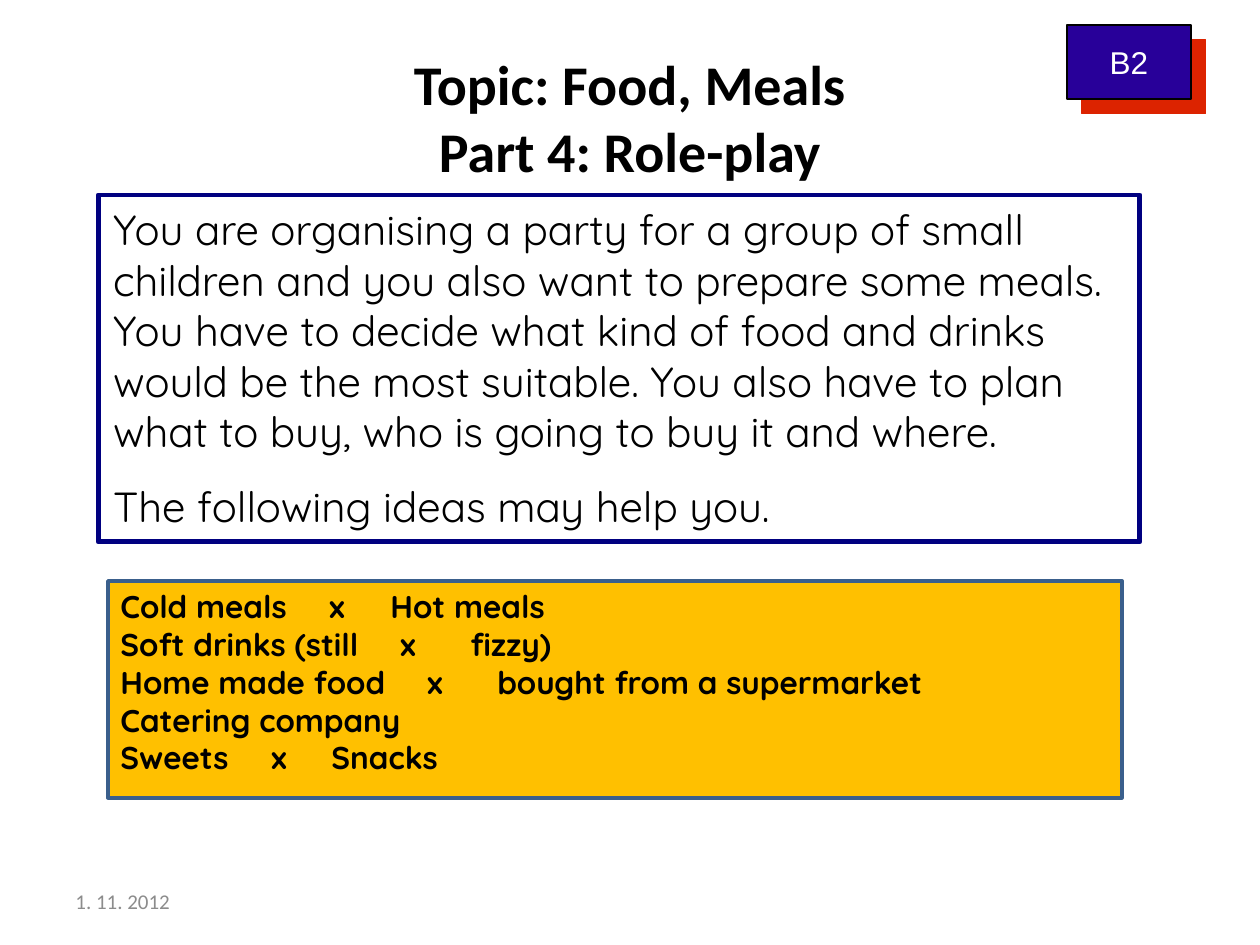
from lxml import etree
from pptx import Presentation
from pptx import util as u
from pptx.dml.color import RGBColor
from pptx.enum import shapes, text
from pptx.oxml.ns import qn

PX = 914400 / 126
BLACK = RGBColor(0x00, 0x00, 0x00)
WHITE = RGBColor(0xFF, 0xFF, 0xFF)
GREY = RGBColor(0x8C, 0x8C, 0x8C)
NAVY = RGBColor(0x00, 0x00, 0x80)
INDIGO = RGBColor(0x28, 0x00, 0x99)
AMBER = RGBColor(0xFF, 0xC0, 0x00)
STEEL = RGBColor(0x3A, 0x5F, 0x8C)


def px(value):
    return u.Emu(round(value * PX))


def format_text(paragraph, font_name, size, color, bold=False, align=text.PP_ALIGN.LEFT):
    paragraph.alignment = align
    for run in paragraph.runs:
        run.font.name = font_name
        run.font.size = u.Pt(size)
        run.font.bold = bold
        run.font.color.rgb = color


presentation = Presentation()
presentation.slide_width, presentation.slide_height = px(1260), px(945)
slide = presentation.slides.add_slide(presentation.slide_layouts[5])

# Title
title = slide.shapes.title
title.left, title.top, title.width, title.height = px(63), px(38), px(1134), px(158)
title.text_frame.text = "Topic: Food, Meals\vPart 4: Role-play"
title.text_frame.vertical_anchor = text.MSO_ANCHOR.MIDDLE
format_text(title.text_frame.paragraphs[0], "Calibri", 32, BLACK, True, text.PP_ALIGN.CENTER)

# Rectangles: place, fill, line colour, line width in points
rectangles = []
for place, fill, line, width in [
    ((108, 581, 1014, 217), AMBER, STEEL, 2),
    ((1067, 25, 124, 74), INDIGO, BLACK, 0.75),
    ((98, 195, 1042, 347), None, NAVY, 2.83),
]:
    shape = slide.shapes.add_shape(shapes.MSO_SHAPE.RECTANGLE, *map(px, place))
    shape.shadow.inherit = False
    if fill is None:
        shape.fill.background()
    else:
        shape.fill.solid()
        shape.fill.fore_color.rgb = fill
    shape.line.color.rgb = line
    shape.line.width = u.Pt(width)
    shape.text_frame.word_wrap = True
    shape.text_frame.vertical_anchor = text.MSO_ANCHOR.TOP
    rectangles.append(shape)
ideas, level, task = rectangles

# Level badge with a hard red shadow
level.text_frame.text = "B2"
level.text_frame.word_wrap = False
level.text_frame.vertical_anchor = text.MSO_ANCHOR.MIDDLE
format_text(level.text_frame.paragraphs[0], "Arial", 18, WHITE, align=text.PP_ALIGN.CENTER)
effects = level._element.spPr.find(qn("a:effectLst"))
shadow = etree.SubElement(effects, qn("a:outerShdw"), blurRad="0", dist=str(u.Pt(12)),
                          dir="2700000", algn="tl", rotWithShape="0")
etree.SubElement(shadow, qn("a:srgbClr"), val="DC2300")

# Role-play task
frame = task.text_frame
frame.margin_left = frame.margin_right = px(15)
frame.margin_top = frame.margin_bottom = px(9)
frame.text = (
    "You are organising a party for a group of small children and you also want to "
    "prepare some meals. You have to decide what kind of food and drinks would be the "
    "most suitable. You also have to plan what to buy, who is going to buy it and where.\n"
    "The following ideas may help you."
)
for paragraph in frame.paragraphs:
    paragraph.space_after = u.Pt(14.2)
    format_text(paragraph, "Quicksand", 24, BLACK)

# Ideas, each with its own tab stops around the "x"
idea_lines = [
    ("Cold meals\tx\tHot meals", (209, 270)),
    ("Soft drinks (still\tx\tfizzy)", (280, 350)),
    ("Home made food\tx\tbought from a supermarket", (307, 377)),
    ("Catering company", ()),
    ("Sweets\tx\tSnacks", (151, 211)),
]
ideas.text_frame.text = "\n".join(line for line, _ in idea_lines)
for paragraph, (_, stops) in zip(ideas.text_frame.paragraphs, idea_lines):
    if stops:
        tabs = etree.SubElement(paragraph._p.get_or_add_pPr(), qn("a:tabLst"))
        for stop in stops:
            etree.SubElement(tabs, qn("a:tab"), pos=str(px(stop)), algn="l")
    format_text(paragraph, "Quicksand", 18, BLACK, True)

# Date
date = slide.shapes.add_textbox(px(63), px(876), px(294), px(50))
date.text_frame.word_wrap = True
date.text_frame.vertical_anchor = text.MSO_ANCHOR.MIDDLE
date.text_frame.text = "1. 11. 2012"
format_text(date.text_frame.paragraphs[0], "Calibri", 12, GREY)

presentation.save("out.pptx")
